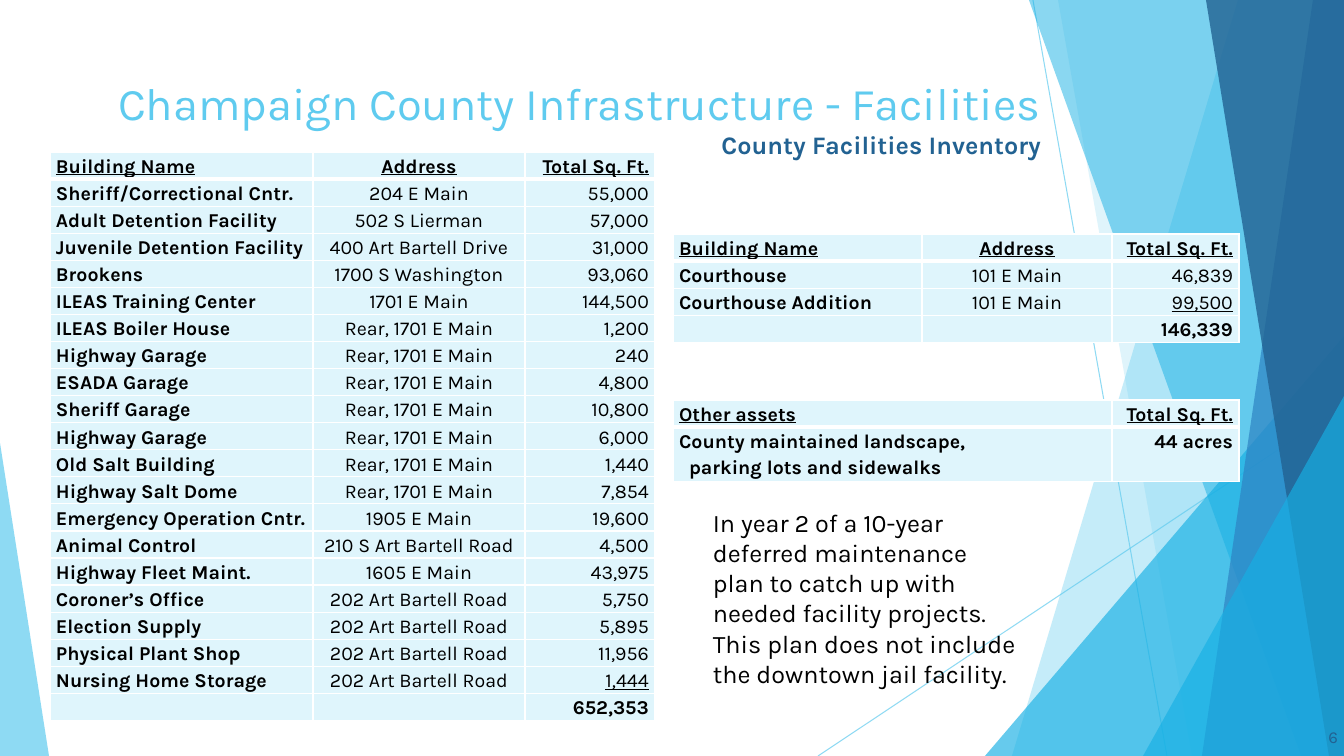
from lxml import etree
from pptx import Presentation
from pptx import util as u
from pptx.dml.color import RGBColor
from pptx.enum import shapes, text
from pptx.oxml.ns import qn

EMU_PER_PX = 12192000 / 1344
WIDTH, HEIGHT = 1344, 756
FONT = "Karla"
COLORS = {
    "sky": "5FCBEF", "cyan": "17B0E4", "blue": "2E83C3", "navy": "226292",
    "cell": "DFF5FC", "border": "FFFFFF", "ink": "000000",
}
ALIGN = {"l": text.PP_ALIGN.LEFT, "c": text.PP_ALIGN.CENTER, "r": text.PP_ALIGN.RIGHT}

REAR = "Rear, 1701 E Main"
BARTELL = "202 Art Bartell Road"
HEADER = ("Building Name", "Address", "Total Sq. Ft.")
BUILDINGS = [
    HEADER,
    ("Sheriff/Correctional Cntr.", "204 E Main", "55,000"),
    ("Adult Detention Facility", "502 S Lierman", "57,000"),
    ("Juvenile Detention Facility", "400 Art Bartell Drive", "31,000"),
    ("Brookens", "1700 S Washington", "93,060"),
    ("ILEAS Training Center", "1701 E Main", "144,500"),
    ("ILEAS Boiler House", REAR, "1,200"),
    ("Highway Garage", REAR, "240"),
    ("ESADA Garage", REAR, "4,800"),
    ("Sheriff Garage", REAR, "10,800"),
    ("Highway Garage", REAR, "6,000"),
    ("Old Salt Building", REAR, "1,440"),
    ("Highway Salt Dome", REAR, "7,854"),
    ("Emergency Operation Cntr.", "1905 E Main", "19,600"),
    ("Animal Control", "210 S Art Bartell Road", "4,500"),
    ("Highway Fleet Maint.", "1605 E Main", "43,975"),
    ("Coroner’s Office", BARTELL, "5,750"),
    ("Election Supply", BARTELL, "5,895"),
    ("Physical Plant Shop", BARTELL, "11,956"),
    ("Nursing Home Storage", BARTELL, "1,444"),
    ("", "", "652,353"),
]
COURTHOUSE = [
    HEADER,
    ("Courthouse", "101 E Main", "46,839"),
    ("Courthouse Addition", "101 E Main", "99,500"),
    ("", "", "146,339"),
]
OTHER_ASSETS = [
    ("Other assets", "Total Sq. Ft."),
    ("County maintained landscape,\vparking lots and sidewalks", "44 acres"),
]


def px(length):
    return u.Emu(round(length * EMU_PER_PX))


def rgb(name):
    return RGBColor.from_string(COLORS[name])


def set_alpha(element, percent):
    color = element.find(".//" + qn("a:srgbClr"))
    etree.SubElement(color, qn("a:alpha")).set("val", str(percent * 1000))


def style_font(font, size, color, bold=False, underline=False):
    font.name, font.size, font.bold, font.underline = FONT, u.Pt(size), bold, underline
    font.color.rgb = rgb(color)


def paint(shape, color, percent):
    shape.shadow.inherit = False
    shape.fill.solid()
    shape.fill.fore_color.rgb = rgb(color)
    set_alpha(shape.fill._xPr, percent)
    shape.line.fill.background()


# Background facets
def add_ray(slide, start, end):
    ray = slide.shapes.add_connector(shapes.MSO_CONNECTOR.STRAIGHT, *map(px, start + end))
    ray.line.color.rgb = rgb("sky")
    ray.line.width = u.Pt(0.75)
    properties = ray._element.spPr
    set_alpha(properties, 70)
    etree.SubElement(properties, qn("a:effectLst"))


def add_band(slide, top_x, bottom_x, color, percent):
    """Band from a slanted left edge to the right side of the slide."""
    builder = slide.shapes.build_freeform(px(top_x), px(0))
    corners = [(WIDTH, 0), (WIDTH, HEIGHT), (bottom_x, HEIGHT)]
    builder.add_line_segments([(px(x), px(y)) for x, y in corners], close=True)
    paint(builder.convert_to_shape(), color, percent)


def add_triangle(slide, box, apex, color, percent):
    triangle = slide.shapes.add_shape(shapes.MSO_SHAPE.ISOSCELES_TRIANGLE, *map(px, box))
    triangle.adjustments[0] = apex
    paint(triangle, color, percent)


def add_background(slide):
    add_ray(slide, (1033, 0), (1167, HEIGHT))
    add_ray(slide, (WIDTH, 406), (818, HEIGHT))
    add_band(slide, 1238, 1012, "sky", 36)
    add_band(slide, 1058, 1192, "sky", 20)
    add_triangle(slide, (985, 336, 359, 420), 1, "cyan", 66)
    add_band(slide, 1029, 1301, "cyan", 50)
    add_band(slide, 1313, 1202, "blue", 70)
    add_band(slide, 1206, 1329, "navy", 80)
    add_triangle(slide, (1143, 396, 201, 360), 1, "cyan", 66)
    add_triangle(slide, (0, 443, 49, 313), 0, "sky", 70)


# Text boxes
def add_text_box(slide, box):
    frame = slide.shapes.add_textbox(*map(px, box)).text_frame
    frame.word_wrap = True
    return frame


def add_title(slide, box):
    paragraph = add_text_box(slide, box).paragraphs[0]
    paragraph.alignment = ALIGN["r"]
    title = paragraph.add_run()
    title.text = "Champaign County Infrastructure - Facilities"
    style_font(title.font, 32.4, "sky")
    paragraph.add_line_break()
    subtitle = paragraph.add_run()
    subtitle.text = "County Facilities Inventory"
    style_font(subtitle.font, 18, "navy", bold=True)


def add_note(slide, box, words, size, color, align="l"):
    paragraph = add_text_box(slide, box).paragraphs[0]
    paragraph.text = words
    paragraph.alignment = ALIGN[align]
    style_font(paragraph.font, size, color)


# Tables
def add_border(cell, side, points):
    line = etree.SubElement(cell._tc.get_or_add_tcPr(), qn("a:ln" + side))
    line.set("w", str(u.Pt(points)))
    fill = etree.SubElement(line, qn("a:solidFill"))
    etree.SubElement(fill, qn("a:srgbClr")).set("val", COLORS["border"])


def fill_cell(cell, words, align, bold, underline):
    cell.fill.solid()
    cell.fill.fore_color.rgb = rgb("cell")
    cell.margin_left = cell.margin_right = px(6)
    cell.margin_top = cell.margin_bottom = 0
    paragraph = cell.text_frame.paragraphs[0]
    paragraph.text = words
    paragraph.alignment = ALIGN[align]
    paragraph.line_spacing = 1.15
    style_font(paragraph.font, 14, "ink", bold, underline)
    if "\v" in words:  # hanging indent for the second line
        properties = paragraph._p.get_or_add_pPr()
        properties.set("marL", str(px(10)))
        properties.set("indent", str(-px(10)))


def add_inventory(slide, left, top, rows, widths, heights, aligns):
    box = map(px, (left, top, sum(widths), sum(heights)))
    table = slide.shapes.add_table(len(rows), len(widths), *box).table
    table.first_row = table.horz_banding = False
    for column, width in zip(table.columns, widths):
        column.width = px(width)
    last_row, last_column = len(rows) - 1, len(widths) - 1
    for r, row in enumerate(rows):
        table.rows[r].height = px(heights[r])
        for c, words in enumerate(row):
            cell = table.cell(r, c)
            for side in "LRTB":
                under_header = (r, side) in ((0, "B"), (1, "T"))
                add_border(cell, side, 3 if under_header else 1)
            bold = r in (0, last_row) or c == 0
            underline = r == 0 or (r, c) == (last_row - 1, last_column)
            fill_cell(cell, words, aligns[c], bold, underline)


def add_facilities_slide(presentation):
    slide = presentation.slides.add_slide(presentation.slide_layouts[6])
    add_background(slide)
    add_title(slide, (75, 70, 976, 145))
    add_inventory(slide, 673, 234, COURTHOUSE, (249, 190, 127), [26] * 4, "lcr")
    add_inventory(slide, 50, 152, BUILDINGS, (263, 212, 130), [27] * 21, "lcr")
    add_inventory(slide, 673, 400, OTHER_ASSETS, (439, 127), [26, 52], "lr")
    add_note(slide, (703, 502, 326, 194),
             "In year 2 of a 10-year deferred maintenance plan to catch up with needed "
             "facility projects. This plan does not include the downtown jail facility.",
             18, "ink")
    add_note(slide, (1288, 722, 60, 34), "6", 12, "navy", "r")


def main():
    presentation = Presentation()
    presentation.slide_width, presentation.slide_height = px(WIDTH), px(HEIGHT)
    add_facilities_slide(presentation)
    presentation.save("out.pptx")


if __name__ == "__main__":
    main()
